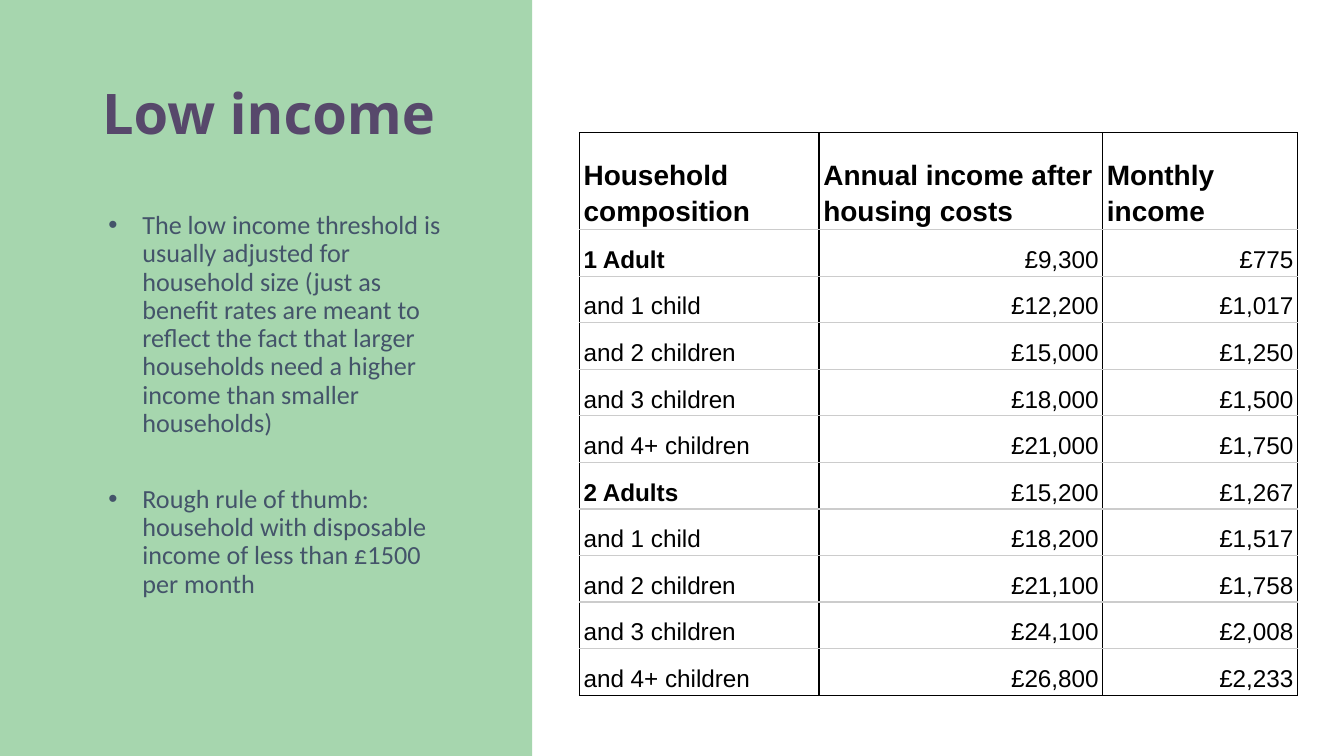
from lxml.etree import SubElement
from pptx import Presentation
from pptx.dml.color import RGBColor
from pptx.enum.shapes import MSO_SHAPE
from pptx.enum.text import MSO_ANCHOR, MSO_AUTO_SIZE, PP_ALIGN
from pptx.oxml.ns import qn
from pptx.util import Cm, Pt

HEADING = "Low income"
POINTS = [
    "The low income threshold is usually adjusted for household size (just as "
    "benefit rates are meant to reflect the fact that larger households need a "
    "higher income than smaller households)",
    "Rough rule of thumb: household with disposable income of less than £1500 per month",
]
COLUMNS = ["Household composition", "Annual income after housing costs", "Monthly income"]
HOUSEHOLDS = {
    "1 Adult": [("£9,300", "£775"), ("£12,200", "£1,017"), ("£15,000", "£1,250"),
                ("£18,000", "£1,500"), ("£21,000", "£1,750")],
    "2 Adults": [("£15,200", "£1,267"), ("£18,200", "£1,517"), ("£21,100", "£1,758"),
                 ("£24,100", "£2,008"), ("£26,800", "£2,233")],
}
CHILDREN = ["and 1 child", "and 2 children", "and 3 children", "and 4+ children"]

THEME = {
    "band": "A6D6AE",
    "grid": "000000",
    "rule": "CCCCCC",
    "border": Pt(0.75),
    "title": dict(font="Open Sans", size=30, color="57486B", bold=True),
    "body": dict(font="Calibri", size=14, color="44546A", spacing=0.9),
    "header": dict(font="Arial", size=15, color="000000", bold=True, spacing=1.15),
    "cell": dict(font="Arial", size=13, color="000000", spacing=1.15),
}

SLIDE_W, SLIDE_H = Cm(25.4), Cm(14.29)
BAND_W = Cm(10.06)
TEXT_LEFT, TEXT_W = Cm(1.68), Cm(7.21)
TABLE_LEFT, TABLE_TOP = Cm(10.95), Cm(2.51)
COLUMN_WIDTHS = [Cm(4.53), Cm(5.36), Cm(3.68)]
HEADER_H, ROW_H = Cm(1.83), Cm(0.88)
INSET = Cm(0.25)
BULLET_LEFT, BULLET_HANG = Cm(0.76), Cm(0.64)
POINT_GAP = 25.5


def write(paragraph, text, *, font, size, color, bold=False, spacing=1.0,
          before=0, align=PP_ALIGN.LEFT):
    run = paragraph.add_run()
    run.text = text
    run.font.name = font
    run.font.size = Pt(size)
    run.font.bold = bold
    run.font.color.rgb = RGBColor.from_string(color)
    paragraph.alignment = align
    paragraph.line_spacing = spacing
    paragraph.space_before = Pt(before)


def place(placeholder, top, height):
    placeholder.left, placeholder.top = TEXT_LEFT, top
    placeholder.width, placeholder.height = TEXT_W, height
    frame = placeholder.text_frame
    frame.word_wrap = True
    frame.auto_size = MSO_AUTO_SIZE.NONE
    frame.vertical_anchor = MSO_ANCHOR.TOP
    frame.margin_left = frame.margin_right = INSET
    frame.margin_top = frame.margin_bottom = INSET
    return frame


def add_bullet(paragraph, color):
    properties = paragraph._p.get_or_add_pPr()
    properties.set("marL", str(BULLET_LEFT))
    properties.set("indent", str(-BULLET_HANG))
    bullet_color = SubElement(properties, qn("a:buClr"))
    SubElement(bullet_color, qn("a:srgbClr"), val=color)
    SubElement(properties, qn("a:buFont"), typeface="Arial")
    SubElement(properties, qn("a:buChar"), char="•")


def set_borders(cell, top, bottom):
    properties = cell._tc.get_or_add_tcPr()
    sides = [("L", THEME["grid"]), ("R", THEME["grid"]), ("T", top), ("B", bottom)]
    for position, (side, color) in enumerate(sides):
        line = SubElement(properties, qn(f"a:ln{side}"), w=str(THEME["border"]))
        SubElement(SubElement(line, qn("a:solidFill")), qn("a:srgbClr"), val=color)
        properties.insert(position, line)


def add_band(slide):
    band = slide.shapes.add_shape(MSO_SHAPE.RECTANGLE, 0, 0, BAND_W, SLIDE_H)
    band.shadow.inherit = False
    band.fill.solid()
    band.fill.fore_color.rgb = RGBColor.from_string(THEME["band"])
    band.line.fill.background()
    slide.shapes._spTree.insert(2, band._element)


def add_income_table(slide):
    rows = [COLUMNS]
    for adults, incomes in HOUSEHOLDS.items():
        rows += [(label, *income) for label, income in zip([adults, *CHILDREN], incomes)]
    last = len(rows) - 1
    table = slide.shapes.add_table(
        len(rows), len(COLUMNS), TABLE_LEFT, TABLE_TOP,
        sum(COLUMN_WIDTHS), HEADER_H + ROW_H * last).table
    table.first_row = table.horz_banding = False
    for column, width in zip(table.columns, COLUMN_WIDTHS):
        column.width = width
    for r, row in enumerate(rows):
        table.rows[r].height = ROW_H if r else HEADER_H
        for c, text in enumerate(row):
            cell = table.cell(r, c)
            cell.fill.background()
            cell.vertical_anchor = MSO_ANCHOR.BOTTOM
            cell.margin_left = cell.margin_right = Cm(0.08)
            cell.margin_top = cell.margin_bottom = Cm(0.05)
            look = dict(THEME["cell"] if r else THEME["header"])
            if text in HOUSEHOLDS:
                look["bold"] = True
            if r and c:
                look["align"] = PP_ALIGN.RIGHT
            write(cell.text_frame.paragraphs[0], text, **look)
            set_borders(cell,
                        top=THEME["rule"] if r else THEME["grid"],
                        bottom=THEME["grid"] if r == last else THEME["rule"])


def main():
    deck = Presentation()
    deck.slide_width, deck.slide_height = SLIDE_W, SLIDE_H
    slide = deck.slides.add_slide(deck.slide_layouts[1])
    add_band(slide)

    heading = place(slide.shapes.title, Cm(1.24), Cm(3.1))
    write(heading.paragraphs[0], HEADING, **THEME["title"])

    points = place(slide.placeholders[1], Cm(3.76), Cm(9.35))
    for i, point in enumerate(POINTS):
        paragraph = points.add_paragraph() if i else points.paragraphs[0]
        write(paragraph, point, before=POINT_GAP if i else 0, **THEME["body"])
        add_bullet(paragraph, THEME["body"]["color"])

    add_income_table(slide)
    deck.save("out.pptx")


if __name__ == "__main__":
    main()
